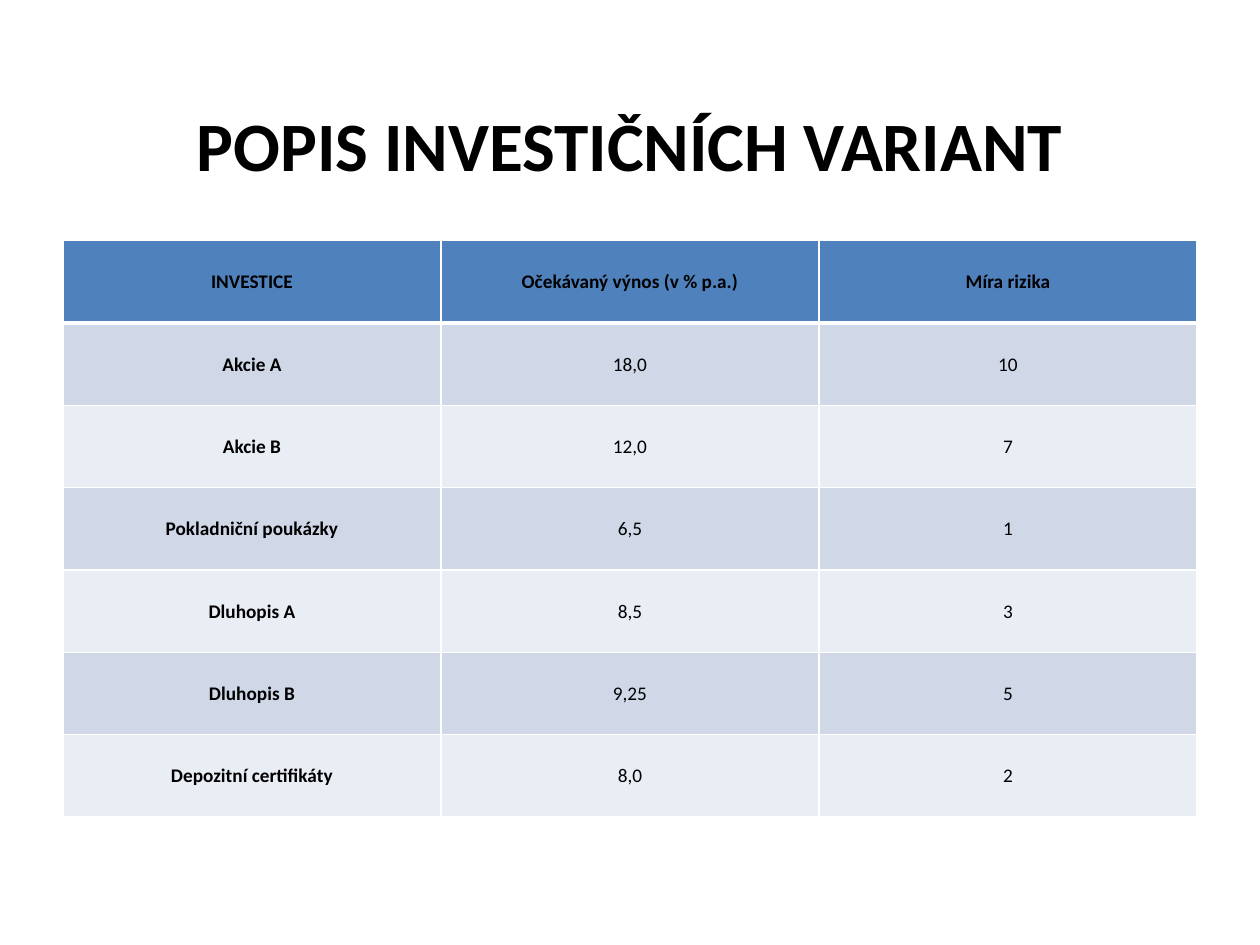
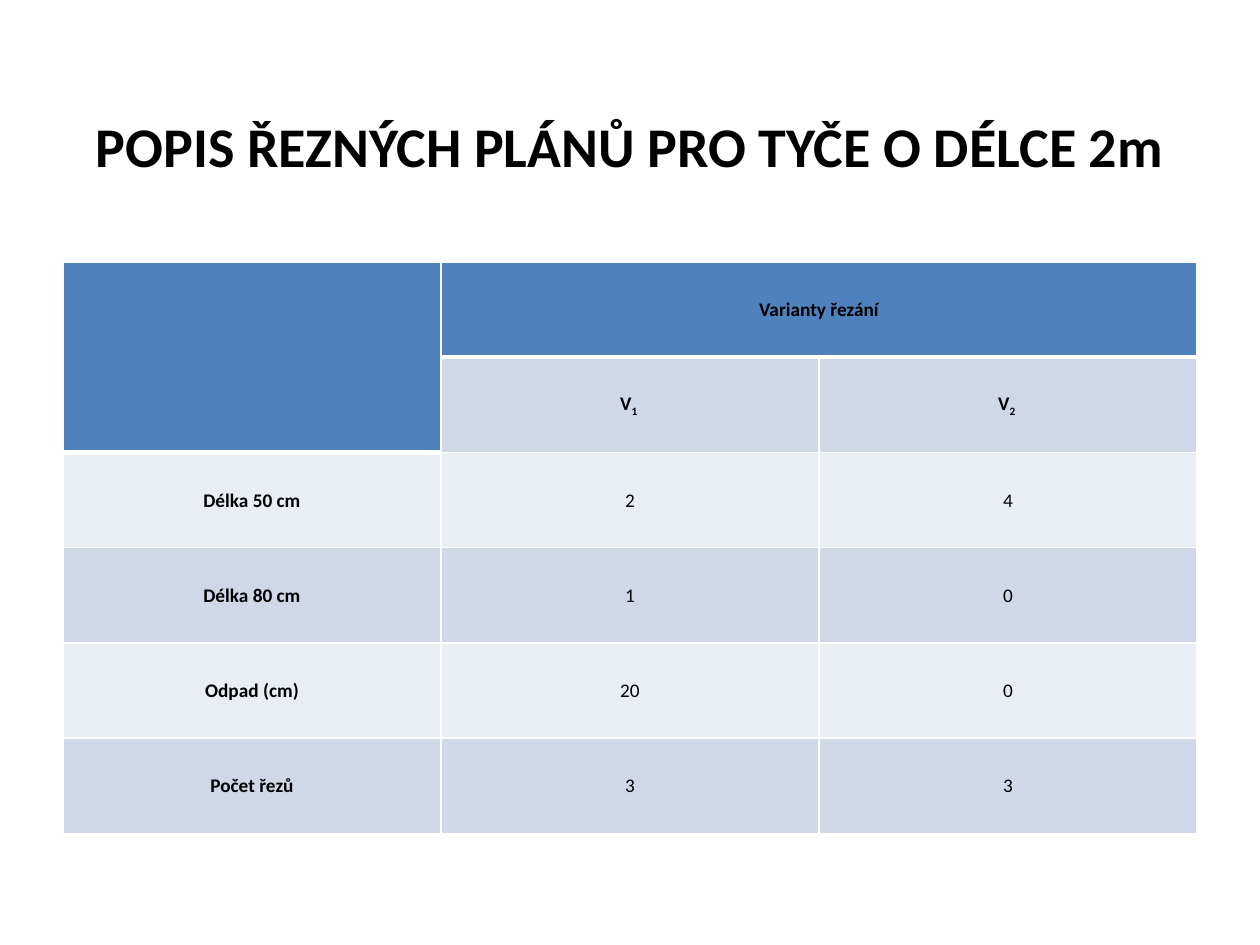
from dataclasses import dataclass

from lxml.etree import SubElement
from pptx import Presentation
from pptx.dml.color import RGBColor
from pptx.enum.text import MSO_ANCHOR, PP_ALIGN
from pptx.oxml.ns import qn
from pptx.slide import Slide
from pptx.table import Table, _Cell
from pptx.text.text import _Paragraph
from pptx.util import Cm, Pt


@dataclass(frozen=True)
class Theme:
    font: str = "Calibri"
    ink: str = "000000"
    head: str = "4F81BD"
    bands: tuple[str, str] = ("E9EDF4", "D0D8E8")
    rule: str = "FFFFFF"
    thin: float = 1
    thick: float = 3
    body: float = 11
    left: float = 1.27
    width: float = 22.86
    inset: float = 0.02


@dataclass(frozen=True)
class Title:
    text: str
    top: float
    height: float
    size: float


@dataclass(frozen=True)
class Grid:
    top: float
    row: float
    rows: tuple[tuple[str, ...], ...]
    spans: tuple[tuple[int, int, int, int], ...] = ()


THEME = Theme()

PAGES = (
    (
        Title("POPIS INVESTIČNÍCH VARIANT", 1.85, 2.08, 39.6),
        Grid(4.85, 1.66, (
            ("INVESTICE", "Očekávaný výnos (v % p.a.)", "Míra rizika"),
            ("Akcie A", "18,0", "10"),
            ("Akcie B", "12,0", "7"),
            ("Pokladniční poukázky", "6,5", "1"),
            ("Dluhopis A", "8,5", "3"),
            ("Dluhopis B", "9,25", "5"),
            ("Depozitní certifikáty", "8,0", "2"),
        )),
    ),
    (
        Title("POPIS ŘEZNÝCH PLÁNŮ PRO TYČE O DÉLCE 2m", 1.93, 2.01, 32),
        Grid(5.28, 1.92, (
            ("", "Varianty řezání", ""),
            ("", "V_1 ", "V_2 "),
            ("Délka 50 cm", "2", "4"),
            ("Délka 80 cm", "1", "0"),
            ("Odpad (cm)", "20", "0"),
            ("Počet řezů", "3", "3"),
        ), ((0, 0, 1, 0), (0, 1, 0, 2))),
    ),
)


def write(para: _Paragraph, text: str, size: float, bold: bool) -> None:
    base, _, sub = text.partition("_")
    para.text = base
    para.alignment = PP_ALIGN.CENTER
    if sub:
        run = para.add_run()
        run.text = sub
        run._r.get_or_add_rPr().set("baseline", "-25000")
    for run in para.runs:
        font = run.font
        font.name, font.size, font.bold = THEME.font, Pt(size), bold
        font.color.rgb = RGBColor.from_string(THEME.ink)


def add_title(slide: Slide, title: Title) -> None:
    box = slide.shapes.add_textbox(
        Cm(THEME.left), Cm(title.top), Cm(THEME.width), Cm(title.height))
    frame = box.text_frame
    frame.word_wrap = True
    frame.vertical_anchor = MSO_ANCHOR.MIDDLE
    write(frame.paragraphs[0], title.text, title.size, True)


def add_rules(cell: _Cell, top: float, base: float) -> None:
    props = cell._tc.get_or_add_tcPr()
    sides = {"L": THEME.thin, "R": THEME.thin, "T": top, "B": base}
    for side, width in sides.items():
        line = SubElement(props, qn(f"a:ln{side}"), w=str(Pt(width)))
        fill = SubElement(line, qn("a:solidFill"))
        SubElement(fill, qn("a:srgbClr"), val=THEME.rule)


def is_head(table: Table, row: int, col: int) -> bool:
    return row == 0 or (row > 0 and table.cell(row, col).is_spanned)


def add_grid(slide: Slide, grid: Grid) -> None:
    count, cols = len(grid.rows), len(grid.rows[0])
    table = slide.shapes.add_table(
        count, cols, Cm(THEME.left), Cm(grid.top),
        Cm(THEME.width), Cm(grid.row * count)).table
    table.first_row = table.horz_banding = False
    for line in table.rows:
        line.height = Cm(grid.row)
    for top, left, base, right in grid.spans:
        table.cell(top, left).merge(table.cell(base, right))

    for row, texts in enumerate(grid.rows):
        for col, text in enumerate(texts):
            cell = table.cell(row, col)
            head = is_head(table, row, col)
            above = is_head(table, row - 1, col)
            add_rules(cell, THEME.thick if above else THEME.thin,
                      THEME.thick if head else THEME.thin)
            cell.fill.solid()
            cell.fill.fore_color.rgb = RGBColor.from_string(
                THEME.head if head else THEME.bands[row % 2])
            cell.vertical_anchor = MSO_ANCHOR.MIDDLE
            cell.margin_left = cell.margin_right = Cm(THEME.inset)
            cell.margin_top, cell.margin_bottom = Cm(THEME.inset), 0
            if text:
                bold = head or col == 0 or "_" in text
                write(cell.text_frame.paragraphs[0], text, THEME.body, bold)


def main() -> None:
    deck = Presentation()
    deck.slide_width, deck.slide_height = Cm(25.4), Cm(19.05)
    for title, grid in PAGES:
        slide = deck.slides.add_slide(deck.slide_layouts[6])
        add_title(slide, title)
        add_grid(slide, grid)
    deck.save("out.pptx")


if __name__ == "__main__":
    main()
